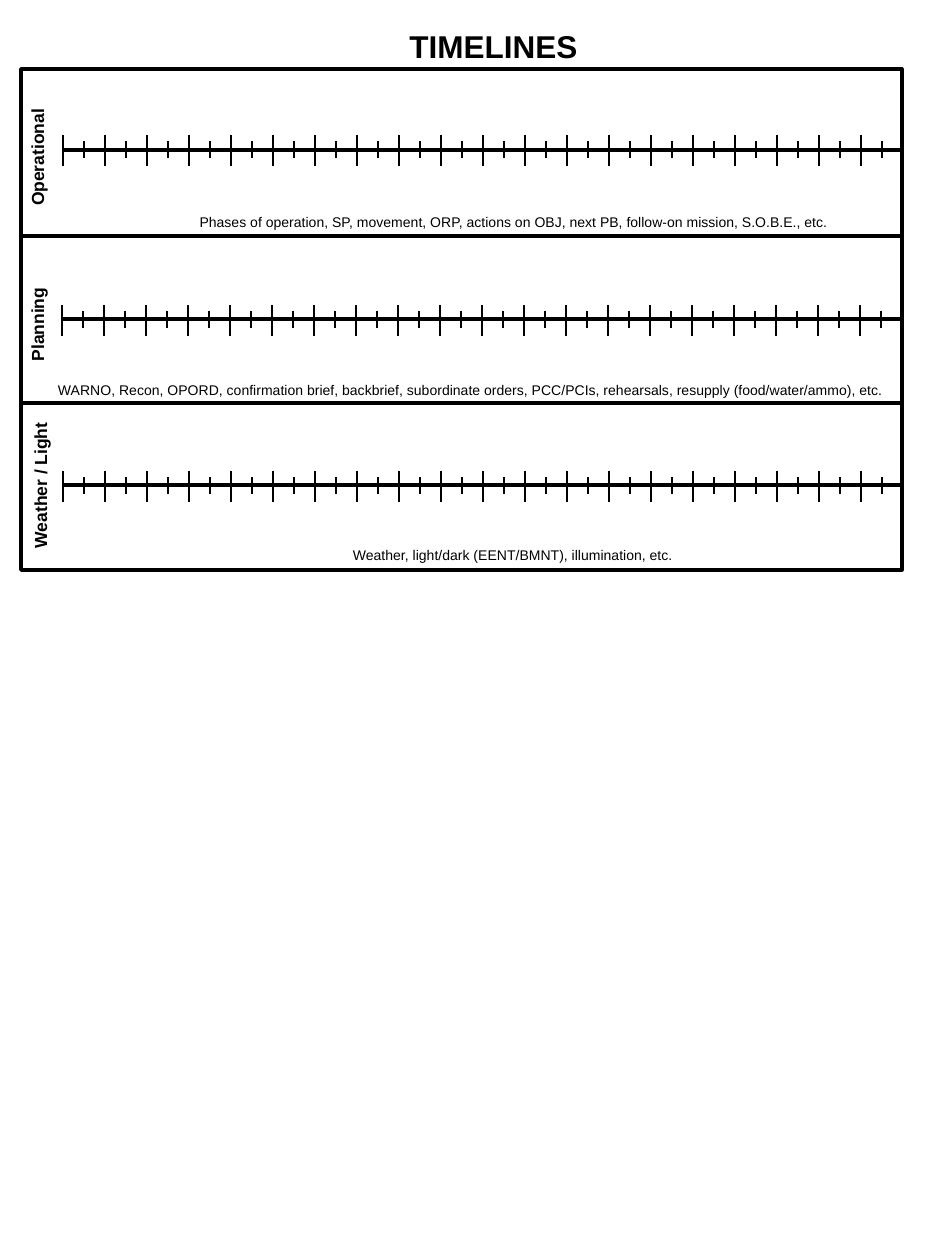
from dataclasses import dataclass

from lxml import etree
from pptx import Presentation
from pptx.dml.color import RGBColor
from pptx.enum.shapes import MSO_CONNECTOR, MSO_SHAPE
from pptx.enum.text import MSO_ANCHOR, MSO_AUTO_SIZE, PP_ALIGN
from pptx.oxml.ns import qn
from pptx.util import Emu, Pt

LINE = MSO_CONNECTOR.STRAIGHT
RECT = MSO_SHAPE.RECTANGLE
TOP = MSO_ANCHOR.TOP
MIDDLE = MSO_ANCHOR.MIDDLE
FIXED = MSO_AUTO_SIZE.NONE
CENTER = PP_ALIGN.CENTER

SCALE = 914400 / 126
COLORS = {"ink": "000000"}
FONT = "Arial"
LEFT, FIRST, WIDTH, HEIGHT = 21, 69, 881, 167
TICKS, STEP = 41, 21


@dataclass
class Box:
    x: int
    y: int
    w: int
    h: int


@dataclass
class Row:
    name: str
    label: Box
    note: str
    hint: Box
    x: int
    axis: int
    tick: int


ROWS = [
    Row("Operational", Box(21, 89, 32, 137),
        "Phases of operation, SP, movement, ORP, actions on OBJ, next PB, "
        "follow-on mission, S.O.B.E., etc.",
        Box(64, 210, 900, 24), 63, 150, 135),
    Row("Planning", Box(21, 256, 32, 137),
        "WARNO, Recon, OPORD, confirmation brief, backbrief, subordinate orders, "
        "PCC/PCIs, rehearsals, resupply (food/water/ammo), etc.",
        Box(21, 378, 900, 24), 62, 319, 305),
    Row("Weather / Light", Box(24, 398, 32, 175),
        "Weather, light/dark (EENT/BMNT), illumination, etc.",
        Box(63, 543, 900, 24), 63, 485, 471),
]


def px(n: int) -> Emu:
    return Emu(round(n * SCALE))


def ink() -> RGBColor:
    return RGBColor.from_string(COLORS["ink"])


def place(shape, box: Box) -> None:
    shape.left, shape.top = px(box.x), px(box.y)
    shape.width, shape.height = px(box.w), px(box.h)


def write(shape, text: str, size: int, bold: bool, anchor) -> None:
    frame = shape.text_frame
    frame.word_wrap = True
    frame.auto_size = FIXED
    frame.vertical_anchor = anchor
    frame.margin_left = frame.margin_right = 0
    frame.margin_top = frame.margin_bottom = px(6)
    para = frame.paragraphs[0]
    para.text = text
    para.alignment = CENTER
    font = para.font
    font.name, font.size, font.bold = FONT, Pt(size), bold
    font.color.rgb = ink()


def label(slide, box: Box, text: str, size: int, bold: bool = False,
          turn: bool = False) -> None:
    shape = slide.shapes.add_textbox(px(box.x), px(box.y), px(box.w), px(box.h))
    write(shape, text, size, bold, MIDDLE)
    if turn:
        shape.element.txBody.find(qn("a:bodyPr")).set("vert", "vert270")


def rule(slide, x1: int, y1: int, x2: int, y2: int, width: float) -> None:
    line = slide.shapes.add_connector(LINE, px(x1), px(y1), px(x2), px(y2))
    line.line.color.rgb = ink()
    line.line.width = Pt(width)
    etree.SubElement(line.element.spPr, qn("a:effectLst"))


def scale(slide, row: Row) -> None:
    rule(slide, row.x, row.axis, row.x + 838, row.axis, 2.25)
    for i in range(TICKS):
        x = row.x + i * STEP
        start, end = (6, 23) if i % 2 else (0, 31)
        rule(slide, x, row.tick + end, x, row.tick + start, 0.75)


def frame(slide, i: int) -> None:
    shape = slide.shapes.add_shape(
        RECT, px(LEFT), px(FIRST + i * HEIGHT), px(WIDTH), px(HEIGHT))
    shape.shadow.inherit = False
    shape.fill.background()
    shape.line.color.rgb = ink()
    shape.line.width = Pt(2)


def main() -> None:
    deck = Presentation()
    deck.slide_width, deck.slide_height = px(945), px(1260)
    slide = deck.slides.add_slide(deck.slide_layouts[5])
    title = slide.shapes.title
    place(title, Box(21, 21, 945, 50))
    write(title, "TIMELINES", 18, True, TOP)
    for i, row in enumerate(ROWS):
        scale(slide, row)
        label(slide, row.label, row.name, 10, True, True)
        frame(slide, i)
        label(slide, row.hint, row.note, 8)
    deck.save("out.pptx")


if __name__ == "__main__":
    main()
